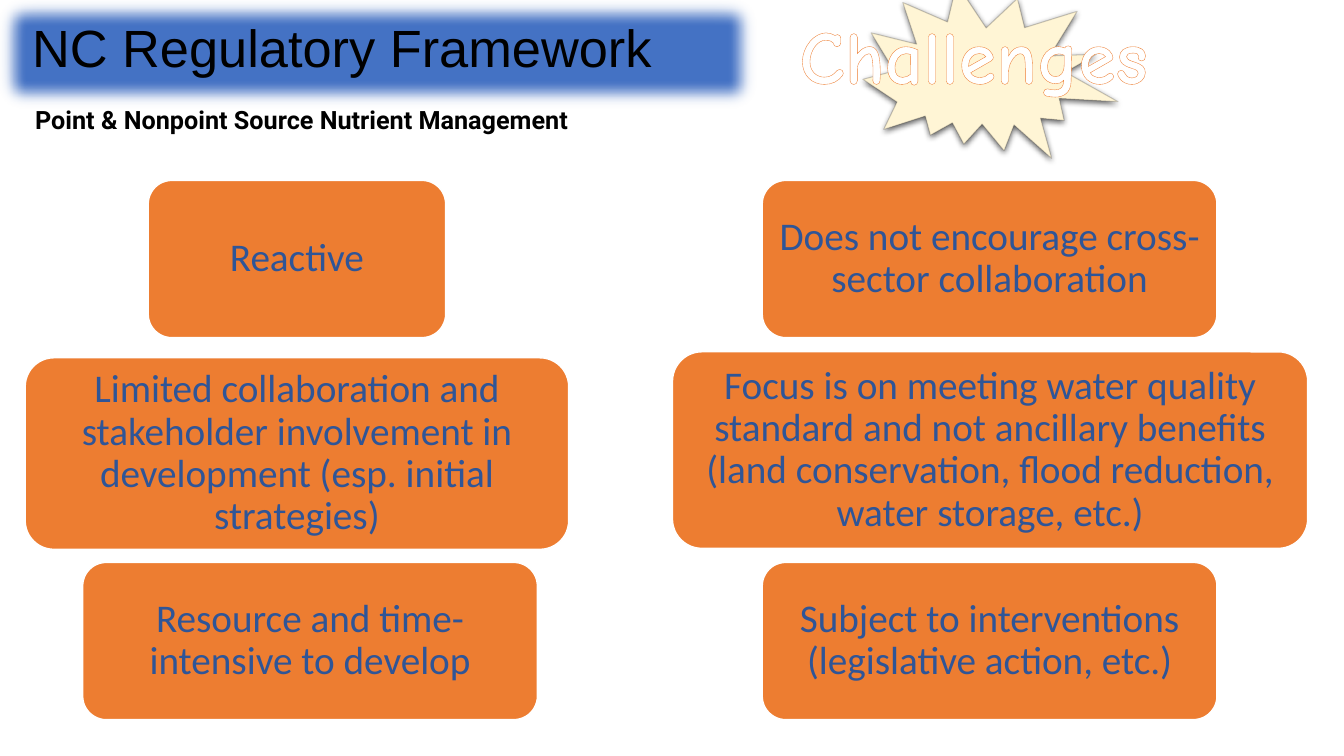
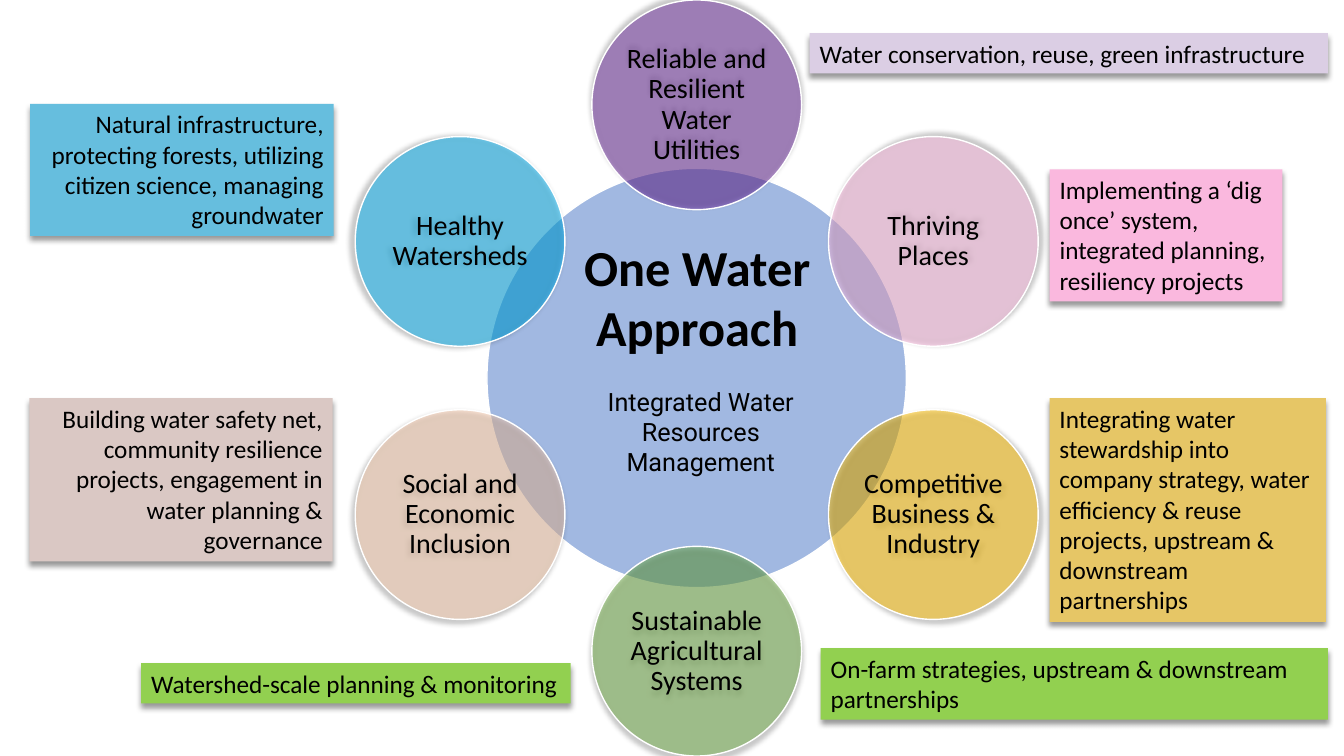
import math
import lxml.etree
import pptx
import pptx.dml.color
import pptx.enum.shapes
import pptx.enum.text
import pptx.oxml.ns
import pptx.util

Inches = pptx.util.Inches
Pt = pptx.util.Pt
RGB = pptx.dml.color.RGBColor.from_string
SHAPE = pptx.enum.shapes.MSO_SHAPE
ALIGN = pptx.enum.text.PP_ALIGN
ANCHOR = pptx.enum.text.MSO_ANCHOR
qn = pptx.oxml.ns.qn


class Theme:
    black, white = "000000", "FFFFFF"
    blue, orange, navy = "4472C4", "ED7D31", "2F5597"
    cream, pink, green = "FFF5D5", "FAB8DE", "92D050"
    body, heading, accent, display = "Calibri", "Arial", "Roboto", "Comic Neue"
    title_size, banner_size, hub_size = 37.4, 54, 36
    box_size, circle_size, note_size = 28, 20, 18
    soft_shadow = (40, 4, 3)


def add_figure(slide, preset, at, fill, alpha=100, line=None, shadow=None):
    figure = slide.shapes.add_shape(preset, *map(Inches, at))
    figure.shadow.inherit = False
    figure.fill.solid()
    figure.fill.fore_color.rgb = RGB(fill)
    properties = figure._element.spPr
    if alpha < 100:
        color = properties.find(qn("a:solidFill")).find(qn("a:srgbClr"))
        lxml.etree.SubElement(color, qn("a:alpha"), val=str(alpha * 1000))
    if line:
        line_color, width, line_alpha = line
        figure.line.color.rgb = RGB(line_color)
        figure.line.width = Pt(width)
        color = properties.find(qn("a:ln")).find(".//" + qn("a:srgbClr"))
        lxml.etree.SubElement(color, qn("a:alpha"), val=str(line_alpha * 1000))
    else:
        figure.line.fill.background()
    if shadow:
        opacity, blur, distance, direction = shadow
        outer = lxml.etree.SubElement(
            properties.find(qn("a:effectLst")), qn("a:outerShdw"),
            blurRad=str(Pt(blur)), dist=str(Pt(distance)),
            dir=str(direction * 60000), algn="ctr", rotWithShape="0")
        color = lxml.etree.SubElement(outer, qn("a:srgbClr"), val=Theme.black)
        lxml.etree.SubElement(color, qn("a:alpha"), val=str(opacity * 1000))
    return figure


def write(holder, text, size, font=Theme.body, color=Theme.black, bold=False,
          align=ALIGN.LEFT, anchor=ANCHOR.TOP, spacing=1.0, inset=(0.1, 0.05)):
    frame = holder.text_frame
    frame.word_wrap = True
    frame.vertical_anchor = anchor
    frame.margin_left = frame.margin_right = Inches(inset[0])
    frame.margin_top = frame.margin_bottom = Inches(inset[1])
    paragraph = frame.paragraphs[0]
    paragraph.text = text
    paragraph.alignment = align
    paragraph.line_spacing = spacing
    paragraph.font.name = font
    paragraph.font.size = Pt(size)
    paragraph.font.bold = bold
    paragraph.font.color.rgb = RGB(color)
    return paragraph


deck = pptx.Presentation()
deck.slide_width, deck.slide_height = Inches(13.33), Inches(7.5)
blank = deck.slide_layouts[6]

framework = deck.slides.add_slide(blank)
burst = add_figure(framework, SHAPE.EXPLOSION2, (8.58, -0.22, 2.48, 1.94), Theme.cream,
                   line=(Theme.black, 0.75, 18), shadow=(63, 4.5, 1.5, 90))
burst.rotation = 28.3

subtitle = framework.shapes.add_textbox(*map(Inches, (0.25, 0.99, 6.71, 0.4)))
write(subtitle, "Point & Nonpoint Source Nutrient Management", Theme.note_size,
      Theme.accent, bold=True)

banner = framework.shapes.add_textbox(*map(Inches, (7.83, 0.12, 4.79, 0.94)))
banner_line = write(banner, "Challenges", Theme.banner_size, Theme.display, Theme.white,
                    bold=True, anchor=ANCHOR.MIDDLE, spacing=0.9)
letters = banner_line.runs[0]._r.get_or_add_rPr()
outline = lxml.etree.SubElement(letters, qn("a:ln"), w=str(Pt(0.52)))
outline_fill = lxml.etree.SubElement(outline, qn("a:solidFill"))
lxml.etree.SubElement(outline_fill, qn("a:srgbClr"), val=Theme.orange)

challenges = [
    ((1.47, 1.79, 2.95, 1.56), "Reactive"),
    ((0.25, 3.55, 5.39, 1.9), "Limited collaboration and stakeholder involvement in "
                              "development (esp. initial strategies)"),
    ((0.82, 5.58, 4.51, 1.56), "Resource and time-intensive to develop"),
    ((7.56, 1.79, 4.51, 1.56), "Does not encourage cross-sector collaboration"),
    ((6.67, 3.49, 6.3, 1.95), "Focus is on meeting water quality standard and not ancillary "
                              "benefits (land conservation, flood reduction, water storage, etc.)"),
    ((7.56, 5.58, 4.51, 1.56), "Subject to interventions (legislative action, etc.)"),
]
for place, challenge in challenges:
    box = add_figure(framework, SHAPE.ROUNDED_RECTANGLE, place, Theme.orange,
                     line=(Theme.white, 1, 100))
    box.adjustments[0] = 0.15
    write(box, challenge, Theme.box_size, color=Theme.navy, align=ALIGN.CENTER,
          anchor=ANCHOR.MIDDLE, spacing=0.9, inset=(0.04, 0))

title_band = add_figure(framework, SHAPE.RECTANGLE, (-0.07, -0.07, 7.62, 1.2), Theme.blue)
lxml.etree.SubElement(title_band._element.spPr.find(qn("a:effectLst")),
                      qn("a:softEdge"), rad=str(Pt(12.5)))
title = framework.shapes.add_textbox(*map(Inches, (0.22, -0.01, 7.33, 1.07)))
write(title, "NC Regulatory Framework", Theme.title_size, Theme.heading,
      anchor=ANCHOR.MIDDLE, spacing=0.8)

one_water = deck.slides.add_slide(blank)
center_x, center_y, ring, hub, petal = 6.91, 3.75, 2.71, 4.16, 2.08
add_figure(one_water, SHAPE.OVAL, (center_x - hub / 2, center_y - hub / 2, hub, hub),
           Theme.blue, alpha=50, line=(Theme.white, 1, 100))

goals = [
    ("Reliable and Resilient Water Utilities", "7030A0", 270),
    ("Thriving Places", Theme.pink, 315),
    ("Competitive Business & Industry", "FFC000", 45),
    ("Sustainable Agricultural Systems", "70AD47", 90),
    ("Social and Economic Inclusion", "F8CBAD", 135),
    ("Healthy Watersheds", "00B0F0", 180),
]
for index, (goal, color, shadow_direction) in enumerate(goals):
    angle = math.radians(60 * index - 90)
    left = center_x + ring * math.cos(angle) - petal / 2
    top = center_y + ring * math.sin(angle) - petal / 2
    circle = add_figure(one_water, SHAPE.OVAL, (left, top, petal, petal), color, alpha=50,
                        line=(Theme.white, 1, 100),
                        shadow=(*Theme.soft_shadow, shadow_direction))
    write(circle, goal, Theme.circle_size, align=ALIGN.CENTER, anchor=ANCHOR.MIDDLE,
          spacing=0.9, inset=(0.03, 0.03))

examples = [
    ((8.03, 0.33, 5.14, 0.4), "DBCEE4", ALIGN.LEFT,
     "Water conservation, reuse, green infrastructure"),
    ((10.41, 1.68, 2.31, 1.31), Theme.pink, ALIGN.LEFT,
     "Implementing a ‘dig once’ system, integrated planning, resiliency projects"),
    ((10.41, 3.95, 2.74, 2.22), "E6C666", ALIGN.LEFT,
     "Integrating water stewardship into company strategy, water efficiency & reuse "
     "projects, upstream & downstream partnerships"),
    ((8.14, 6.43, 5.03, 0.71), Theme.green, ALIGN.LEFT,
     "On-farm strategies, upstream & downstream partnerships"),
    ((0.29, 3.95, 3.01, 1.62), "DAC8C4", ALIGN.RIGHT,
     "Building water safety net, community resilience projects, engagement in water "
     "planning & governance"),
    ((0.3, 1.03, 3.01, 1.31), "66BEDE", ALIGN.RIGHT,
     "Natural infrastructure, protecting forests, utilizing citizen science, managing "
     "groundwater"),
    ((1.4, 6.58, 4.26, 0.4), Theme.green, ALIGN.LEFT,
     "Watershed-scale planning & monitoring"),
]
for place, color, align, example in examples:
    note = add_figure(one_water, SHAPE.RECTANGLE, place, color,
                      shadow=(*Theme.soft_shadow, 90))
    write(note, example, Theme.note_size, align=align)

approach = one_water.shapes.add_textbox(*map(Inches, (4.89, 2.29, 4.05, 1.31)))
write(approach, "One Water Approach", Theme.hub_size, bold=True, align=ALIGN.CENTER)
management = one_water.shapes.add_textbox(*map(Inches, (5.69, 3.78, 2.52, 1.01)))
write(management, "Integrated Water Resources Management", Theme.note_size, Theme.accent,
      align=ALIGN.CENTER)

deck.save("out.pptx")
